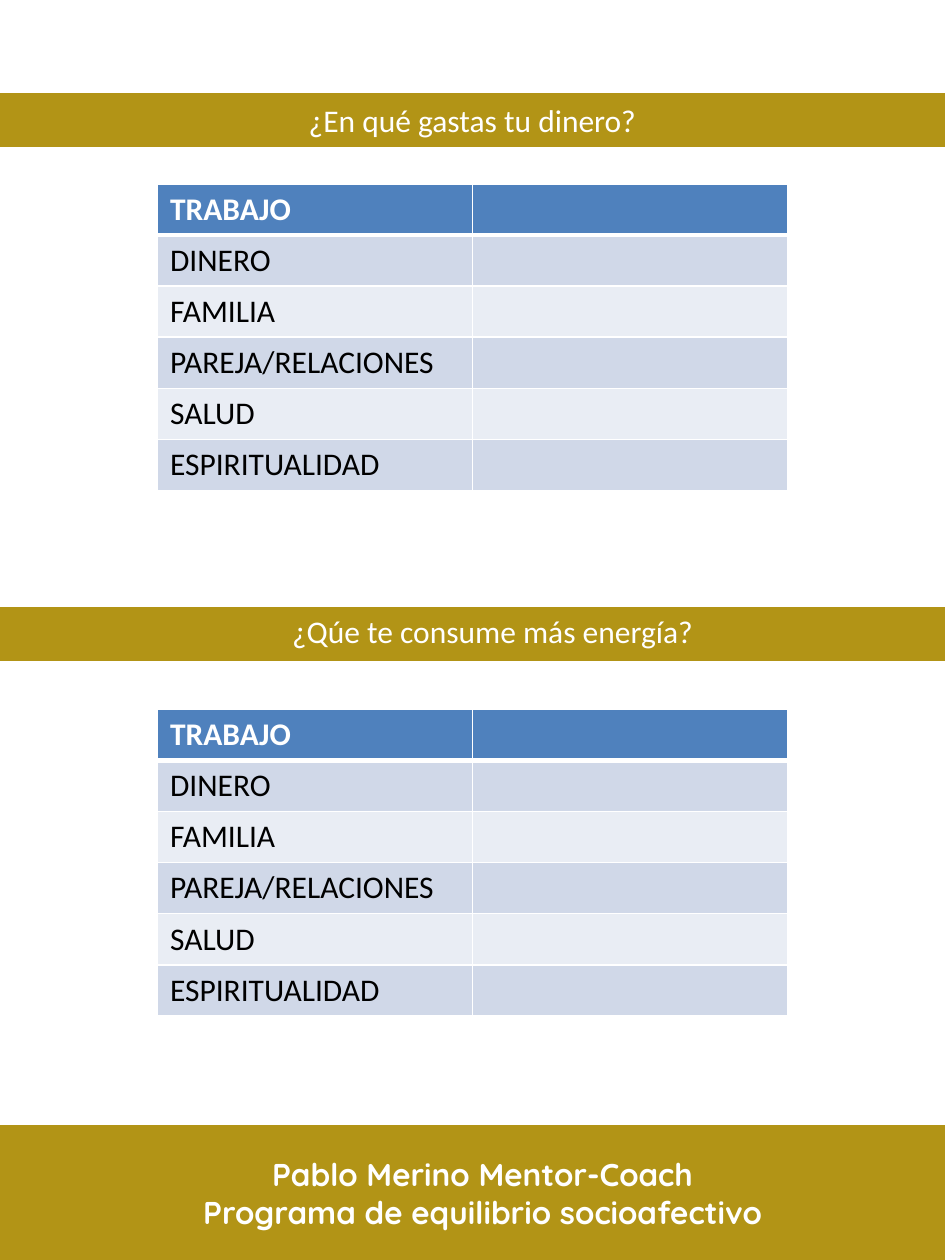
"""Build a worksheet slide with two titled tables and a footer band."""
from dataclasses import dataclass

import lxml.etree
import pptx
import pptx.dml.color
import pptx.enum.shapes
import pptx.enum.text
import pptx.oxml.ns
import pptx.util
from pptx.util import Inches

GOLD = "B29416"
WHITE = "FFFFFF"
BLACK = "000000"
HEADER_BLUE = "4F81BD"
ROW_FILLS = ("E9EDF4", "D0D8E8")
AREAS = ("TRABAJO", "DINERO", "FAMILIA", "PAREJA/RELACIONES", "SALUD", "ESPIRITUALIDAD")
FOOTER_LINES = ("Pablo Merino Mentor-Coach", "Programa de equilibrio socioafectivo")


@dataclass(frozen=True)
class Area:
    left: float
    top: float
    width: float
    height: float


@dataclass(frozen=True)
class Section:
    question: str
    band: Area
    heading: Area
    table: Area


SECTIONS = (
    Section("¿En qué gastas tu dinero?", Area(0, 0.75, 7.5, 0.4),
            Area(0.76, 0.75, 5.98, 0.4), Area(1.25, 1.46, 5, 2.43)),
    Section("¿Qúe te consume más energía?", Area(0, 4.83, 7.5, 0.4),
            Area(0.92, 4.81, 5.98, 0.4), Area(1.25, 5.63, 5, 2.43)),
)
FOOTER_BAND = Area(0, 8.94, 7.5, 1.06)
FOOTER_TEXT = Area(0.64, 9.12, 6.38, 0.71)


def color(value: str) -> pptx.dml.color.RGBColor:
    return pptx.dml.color.RGBColor.from_string(value)


def place(area: Area) -> tuple:
    return Inches(area.left), Inches(area.top), Inches(area.width), Inches(area.height)


def add_span(para, text: str, ink: str, font: str = "Calibri", bold: bool = False) -> None:
    span = para.add_run()
    span.text = text
    span.font.name = font
    span.font.size = pptx.util.Pt(18)
    span.font.bold = bold
    span.font.color.rgb = color(ink)


def add_band(slide, area: Area) -> None:
    band = slide.shapes.add_shape(pptx.enum.shapes.MSO_SHAPE.RECTANGLE, *place(area))
    band.shadow.inherit = False
    band.fill.solid()
    band.fill.fore_color.rgb = color(GOLD)
    band.line.color.rgb = color(GOLD)
    band.line.width = pptx.util.Pt(2)


def fill_text(box, area: Area, lines: tuple, font: str = "Calibri", bold: bool = False) -> None:
    box.left, box.top, box.width, box.height = place(area)
    frame = box.text_frame
    frame.word_wrap = True
    frame.auto_size = pptx.enum.text.MSO_AUTO_SIZE.NONE
    frame.vertical_anchor = pptx.enum.text.MSO_ANCHOR.TOP
    for index, line in enumerate(lines):
        para = frame.add_paragraph() if index else frame.paragraphs[0]
        para.alignment = pptx.enum.text.PP_ALIGN.CENTER
        add_span(para, line, WHITE, font, bold)


def add_border(cell, side: str, points: float) -> None:
    name = pptx.oxml.ns.qn
    border = lxml.etree.Element(name(f"a:{side}"), w=str(pptx.util.Pt(points)))
    fill = lxml.etree.SubElement(border, name("a:solidFill"))
    lxml.etree.SubElement(fill, name("a:srgbClr"), val=WHITE)
    cell.fill.solid()
    cell.fill.fore_color.rgb = color(HEADER_BLUE)
    cell._tc.tcPr.insert(0, border)


def add_area_table(slide, area: Area) -> None:
    table = slide.shapes.add_table(len(AREAS), 2, *place(area)).table
    for index, name in enumerate(AREAS):
        header = index == 0
        for cell in table.rows[index].cells:
            if header:
                add_border(cell, "lnB", 3)
            else:
                cell.fill.solid()
                cell.fill.fore_color.rgb = color(ROW_FILLS[index % 2])
        para = table.cell(index, 0).text_frame.paragraphs[0]
        add_span(para, name, WHITE if header else BLACK, bold=header)


def main() -> None:
    deck = pptx.Presentation()
    deck.slide_width, deck.slide_height = Inches(7.5), Inches(10)
    slide = deck.slides.add_slide(deck.slide_layouts[5])
    title = slide.shapes.title

    for section in SECTIONS:
        add_band(slide, section.band)
    title.element.getparent().append(title.element)

    for index, section in enumerate(SECTIONS):
        box = slide.shapes.add_textbox(*place(section.heading)) if index else title
        fill_text(box, section.heading, (section.question,))
        add_area_table(slide, section.table)

    add_band(slide, FOOTER_BAND)
    footer = slide.shapes.add_textbox(*place(FOOTER_TEXT))
    fill_text(footer, FOOTER_TEXT, FOOTER_LINES, "Quicksand", True)
    deck.save("out.pptx")


if __name__ == "__main__":
    main()
